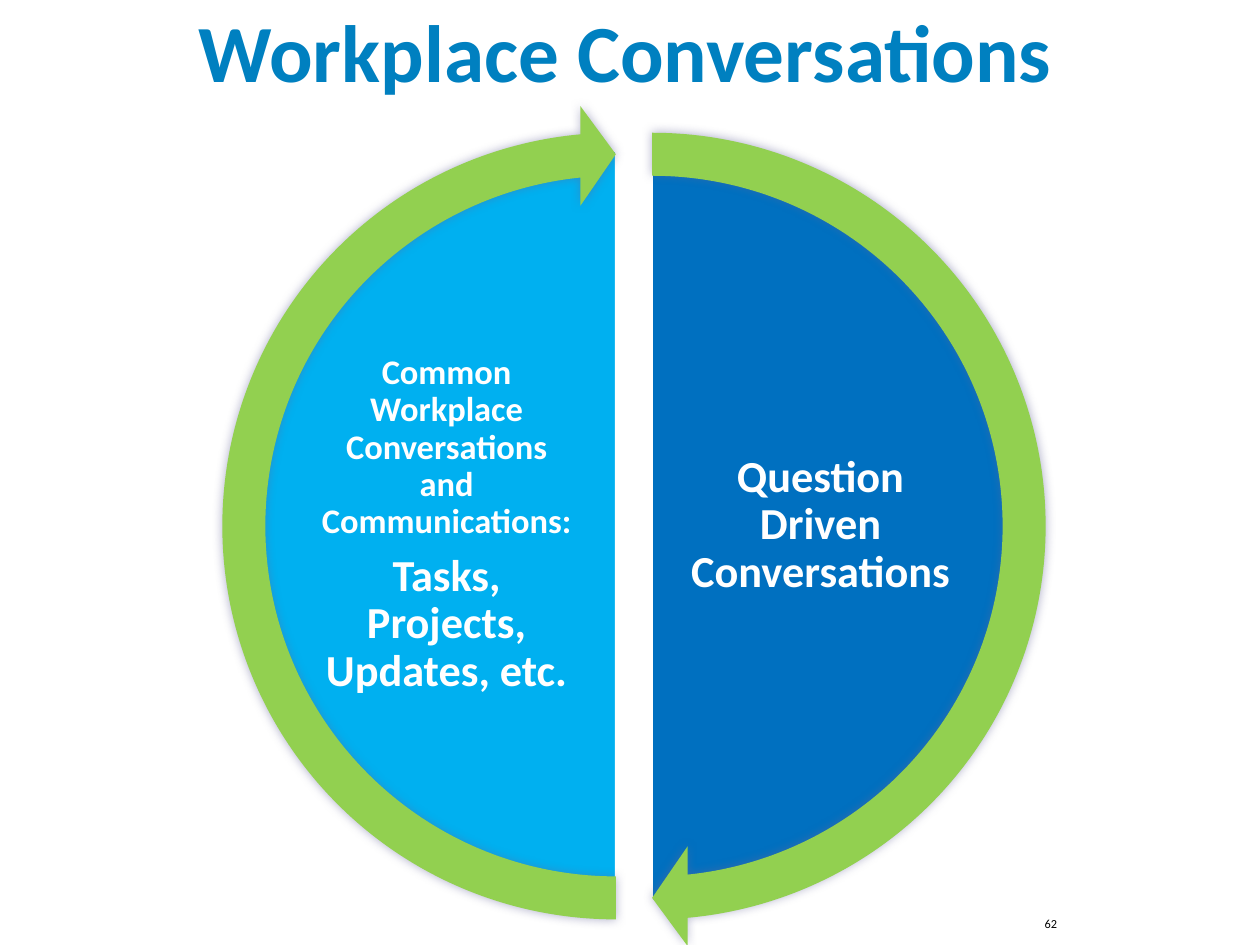
import pptx
import pptx.util
import pptx.dml.color
import pptx.oxml
import pptx.oxml.ns
from dataclasses import dataclass
from pptx.enum.shapes import MSO_SHAPE
from pptx.enum.text import MSO_ANCHOR, MSO_AUTO_SIZE, PP_ALIGN

Inches = pptx.util.Inches
Pt = pptx.util.Pt
RGB = pptx.dml.color.RGBColor.from_string


@dataclass(frozen=True)
class Theme:
    font: str = "Calibri"
    title: str = "0080C0"
    dark: str = "0070C0"
    light: str = "00B0F0"
    arrow: str = "92D050"
    white: str = "FFFFFF"
    black: str = "000000"
    head: int = 66
    large: int = 36
    mid: int = 28
    small: int = 10


theme = Theme()


def style(para, size, color, bold=True):
    for run in para.runs:
        run.font.name = theme.font
        run.font.size = Pt(size)
        run.font.bold = bold
        run.font.color.rgb = RGB(color)


def add_shape(kind, left, top, size, turns, color):
    """Add a square, filled preset shape with its adjustments."""
    shape = slide.shapes.add_shape(
        kind, Inches(left), Inches(top), Inches(size), Inches(size))
    for i, turn in enumerate(turns):
        shape.adjustments[i] = turn
    shape.shadow.inherit = False
    shape.fill.solid()
    shape.fill.fore_color.rgb = RGB(color)
    return shape


deck = pptx.Presentation()
deck.slide_width = Inches(14.22)
deck.slide_height = Inches(10.67)
slide = deck.slides.add_slide(deck.slide_layouts[5])

title = slide.shapes.title
title.left, title.top = Inches(0.93), Inches(-0.08)
title.width, title.height = Inches(12.26), Inches(1.29)
frame = title.text_frame
frame.text = "Workplace Conversations"
frame.auto_size = MSO_AUTO_SIZE.NONE
frame.vertical_anchor = MSO_ANCHOR.MIDDLE
frame.paragraphs[0].alignment = PP_ALIGN.CENTER
style(frame.paragraphs[0], theme.head, theme.title)

# Half circles: pie left, start and end angles, fill, text left, paragraphs
halves = [
    (3.12, (162, 54), theme.dark, 7.75,
     [("Question Driven Conversations", theme.large)]),
    (2.72, (54, 162), theme.light, 3.53,
     [("Common Workplace Conversations and Communications:", theme.mid),
      ("Tasks, Projects, Updates, etc.", theme.large)]),
]
for left, turns, color, text_left, lines in halves:
    pie = add_shape(MSO_SHAPE.PIE, left, 1.7, 8.47, turns, color)
    pie.line.color.rgb = RGB(theme.white)
    pie.line.width = Pt(2)

    box = slide.shapes.add_textbox(
        Inches(text_left), Inches(3.92), Inches(3.02), Inches(4.03))
    frame = box.text_frame
    frame.word_wrap = True
    frame.vertical_anchor = MSO_ANCHOR.MIDDLE
    frame.margin_left = frame.margin_right = Inches(0.04)
    frame.margin_top = frame.margin_bottom = Inches(0.04)
    for i, (text, size) in enumerate(lines):
        para = frame.add_paragraph() if i else frame.paragraphs[0]
        para.text = text
        para.alignment = PP_ALIGN.CENTER
        para.line_spacing = 0.9
        para.space_after = Pt(0.35 * size)
        style(para, size, theme.white)

# Arrows around the halves, each with a soft translucent shadow
shadow = (
    f'<a:outerShdw {pptx.oxml.ns.nsdecls("a")} blurRad="101600" dist="0" '
    'algn="ctr" rotWithShape="0"><a:srgbClr val="666699">'
    '<a:alpha val="50000"/></a:srgbClr></a:outerShdw>')
for left, end, start in [(2.6, 50.725, 162), (2.19, 158.725, 54)]:
    arrow = add_shape(MSO_SHAPE.CIRCULAR_ARROW, left, 1.18, 9.52,
                      (0.051, 3.275, end, start, 0.059), theme.arrow)
    arrow.line.fill.background()
    effects = arrow.element.spPr.find(pptx.oxml.ns.qn("a:effectLst"))
    effects.append(pptx.oxml.parse_xml(shadow))

number = slide.shapes.add_textbox(
    Inches(11.69), Inches(10.3), Inches(3.32), Inches(0.74))
number.text_frame.word_wrap = True
number.text_frame.text = "62"
style(number.text_frame.paragraphs[0], theme.small, theme.black, False)

deck.save("out.pptx")
